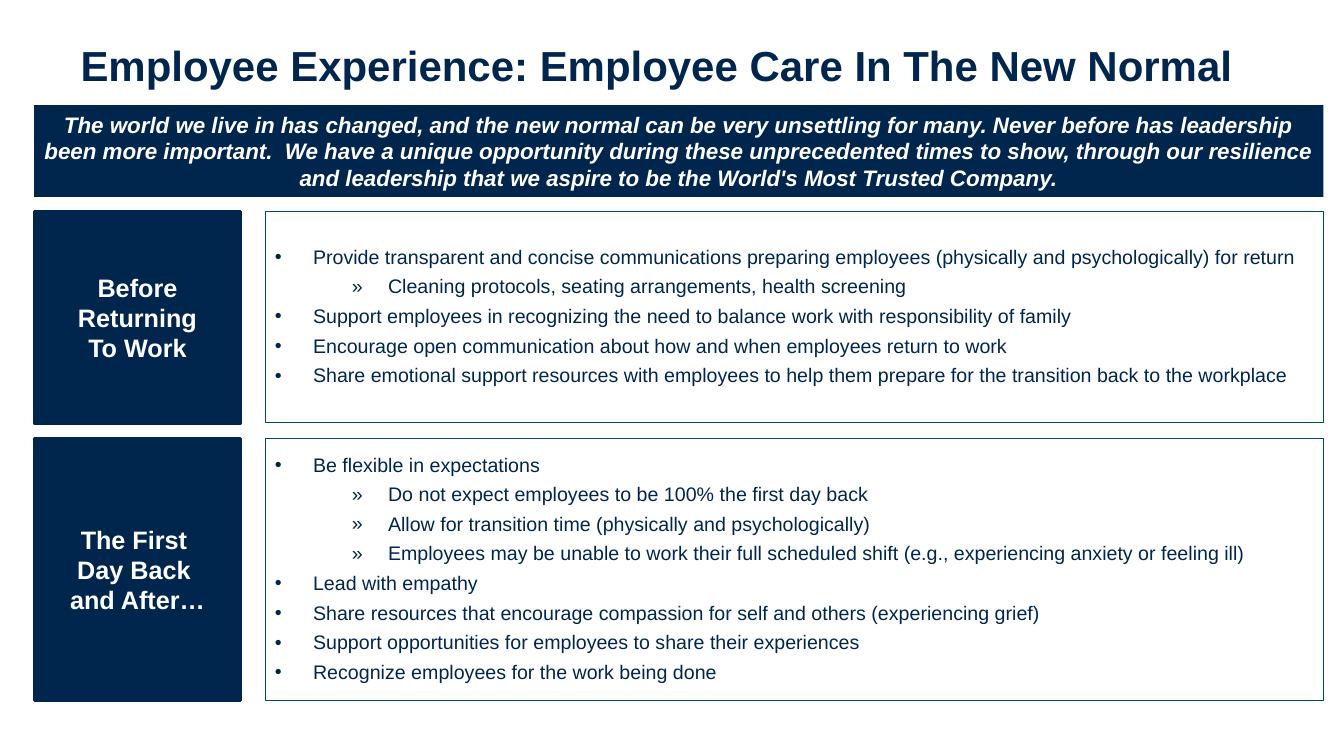
from dataclasses import dataclass

from pptx import Presentation
from pptx import util as u
from pptx.dml.color import RGBColor
from pptx.enum import shapes, text
from pptx.oxml import parse_xml
from pptx.oxml.ns import nsdecls


@dataclass(frozen=True)
class Theme:
    font: str = "Arial"
    navy: RGBColor = RGBColor(0x00, 0x26, 0x4E)
    border: RGBColor = RGBColor(0x00, 0x45, 0x7E)
    white: RGBColor = RGBColor(0xFF, 0xFF, 0xFF)
    title_size: int = 30
    heading_size: int = 18
    banner_size: int = 16
    body_size: int = 14


THEME = Theme()

LEFT = 0.86
RIGHT = 33.35
HEADING_WIDTH = 5.21
PANEL_LEFT = 6.68
# Per level: bullet sign, text margin and hanging indent in cm
BULLETS = (("•", 0.96, 0.96), ("»", 2.85, 0.91))

TITLE = "Employee Experience: Employee Care In The New Normal"
BANNER = (
    "The world we live in has changed, and the new normal can be very unsettling for many. "
    "Never before has leadership been more important.  We have a unique opportunity during "
    "these unprecedented times to show, through our resilience and leadership that we aspire "
    "to be the World's Most Trusted Company."
)

# Top, height, heading lines, (level, advice) pairs
STAGES = (
    (5.33, 5.33, ("Before", "Returning", "To Work"), (
        (0, "Provide transparent and concise communications preparing employees "
            "(physically and psychologically) for return"),
        (1, "Cleaning protocols, seating arrangements, health screening"),
        (0, "Support employees in recognizing the need to balance work with responsibility of family"),
        (0, "Encourage open communication about how and when employees return to work"),
        (0, "Share emotional support resources with employees to help them prepare "
            "for the transition back to the workplace"),
    )),
    (11.05, 6.6, ("The First ", "Day Back ", "and After…"), (
        (0, "Be flexible in expectations"),
        (1, "Do not expect employees to be 100% the first day back"),
        (1, "Allow for transition time (physically and psychologically)"),
        (1, "Employees may be unable to work their full scheduled shift "
            "(e.g., experiencing anxiety or feeling ill)"),
        (0, "Lead with empathy"),
        (0, "Share resources that encourage compassion for self and others (experiencing grief)"),
        (0, "Support opportunities for employees to share their experiences"),
        (0, "Recognize employees for the work being done"),
    )),
)


def apply_format(target, values):
    for name, value in values.items():
        setattr(target, name, value)


def write_paragraphs(frame, lines, size, color, paragraph_format, bold=False, italic=False):
    apply_format(frame, {"word_wrap": True, "vertical_anchor": text.MSO_ANCHOR.MIDDLE})
    for index, line in enumerate(lines):
        paragraph = frame.paragraphs[0] if index == 0 else frame.add_paragraph()
        apply_format(paragraph, paragraph_format)
        run = paragraph.add_run()
        run.text = line
        apply_format(run.font, {"name": THEME.font, "size": u.Pt(size), "bold": bold, "italic": italic})
        run.font.color.rgb = color


def add_box(slide, left, top, width, height, fill=None, line=None, line_width=0.75):
    box = slide.shapes.add_shape(
        shapes.MSO_SHAPE.RECTANGLE, u.Cm(left), u.Cm(top), u.Cm(width), u.Cm(height))
    box.shadow.inherit = False
    if fill is None:
        box.fill.background()
    else:
        box.fill.solid()
        box.fill.fore_color.rgb = fill
    if line is None:
        box.line.fill.background()
    else:
        box.line.color.rgb = line
        box.line.width = u.Pt(line_width)
    return box


def add_bullet(paragraph, level):
    sign, margin, hanging = BULLETS[level]
    paragraph.level = level
    properties = paragraph._p.get_or_add_pPr()
    properties.set("marL", str(u.Cm(margin)))
    properties.set("indent", str(-u.Cm(hanging)))
    properties.append(parse_xml(f'<a:buFont {nsdecls("a")} typeface="{THEME.font}"/>'))
    properties.append(parse_xml(f'<a:buChar {nsdecls("a")} char="{sign}"/>'))


def add_title(slide):
    title = slide.shapes.add_textbox(u.Cm(1.78), u.Cm(1.02), u.Cm(32.08), u.Cm(1.4))
    write_paragraphs(title.text_frame, [TITLE], THEME.title_size, THEME.navy,
                     {"line_spacing": 0.9}, bold=True)


def add_banner(slide):
    banner = add_box(slide, LEFT, 2.65, RIGHT - LEFT, 2.31, fill=THEME.navy)
    write_paragraphs(banner.text_frame, [BANNER], THEME.banner_size, THEME.white,
                     {"alignment": text.PP_ALIGN.CENTER}, bold=True, italic=True)


def add_stage(slide, top, height, heading_lines, advice):
    """Add a heading block with its bulleted panel."""
    panel = add_box(slide, PANEL_LEFT, top, RIGHT - PANEL_LEFT, height, line=THEME.border)
    write_paragraphs(panel.text_frame, [line for _, line in advice], THEME.body_size, THEME.navy,
                     {"alignment": text.PP_ALIGN.LEFT, "line_spacing": 0.9, "space_after": u.Pt(6)})
    for paragraph, (level, _) in zip(panel.text_frame.paragraphs, advice):
        add_bullet(paragraph, level)

    heading = add_box(slide, LEFT, top, HEADING_WIDTH, height,
                      fill=THEME.navy, line=THEME.navy, line_width=2.25)
    write_paragraphs(heading.text_frame, heading_lines, THEME.heading_size, THEME.white,
                     {"alignment": text.PP_ALIGN.CENTER}, bold=True)


def main():
    deck = Presentation()
    apply_format(deck, {"slide_width": u.Cm(33.87), "slide_height": u.Cm(19.05)})
    slide = deck.slides.add_slide(deck.slide_layouts[6])
    add_title(slide)
    for stage in STAGES:
        add_stage(slide, *stage)
    add_banner(slide)
    deck.save("out.pptx")


if __name__ == "__main__":
    main()
